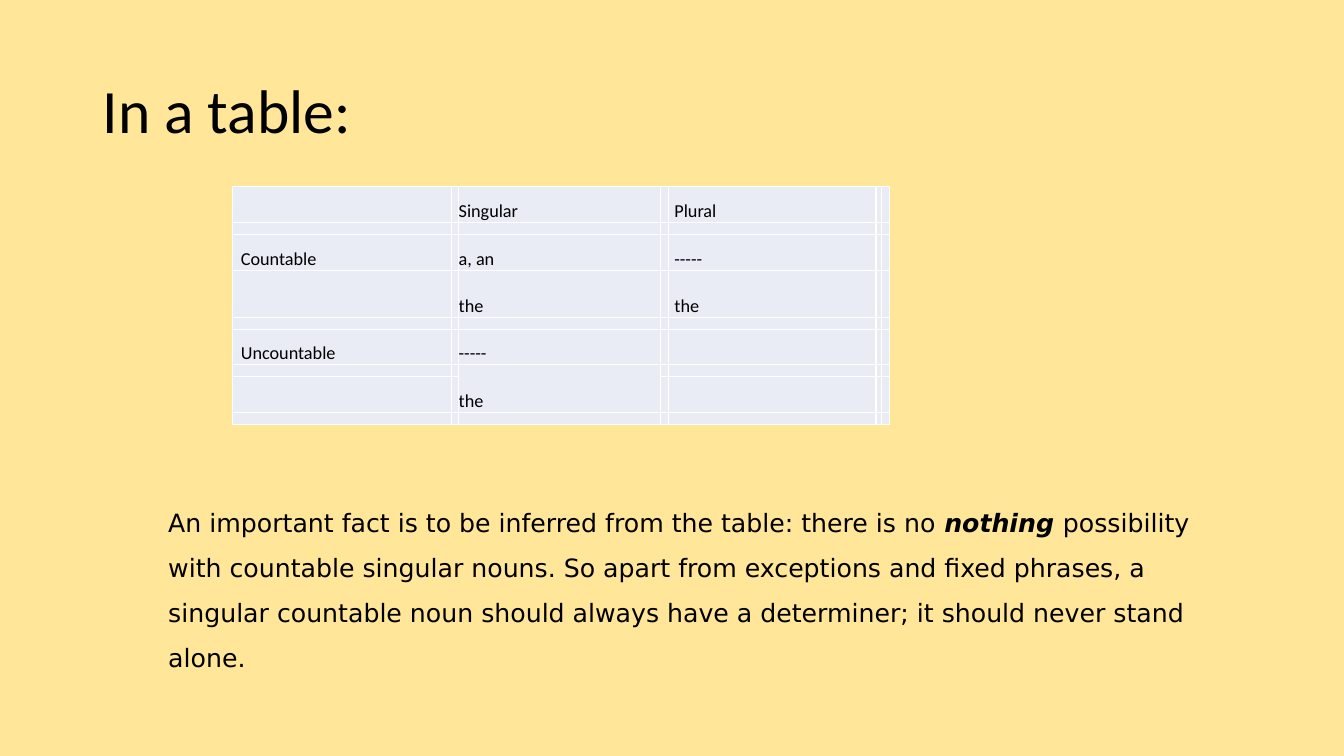
from dataclasses import dataclass

from lxml.etree import SubElement
from pptx import Presentation
from pptx.dml.color import RGBColor
from pptx.enum.text import MSO_ANCHOR, MSO_AUTO_SIZE
from pptx.oxml import parse_xml
from pptx.oxml.ns import nsdecls, qn
from pptx.util import Inches, Pt


@dataclass(frozen=True)
class Theme:
    background: str = "FFE699"
    ink: str = "000000"
    cell: str = "E9EBF5"
    border: str = "FFFFFF"
    title_font: str = "Calibri"
    body_font: str = "DejaVu Sans"
    title_size: int = 44
    table_size: int = 13
    body_size: int = 18
    empty_size: int = 2


theme = Theme()


def write(para, text, font=theme.title_font, size=theme.table_size,
          emphasis=False, indent=0, spacing=None):
    if indent:
        para._p.get_or_add_pPr().set("marL", str(Inches(indent)))
    if spacing:
        para.line_spacing = spacing
    span = para.add_run()
    span.text = text
    span.font.name = font
    span.font.size = Pt(size)
    span.font.bold = emphasis
    span.font.italic = emphasis
    span.font.color.rgb = RGBColor.from_string(theme.ink)


def add_borders(cell):
    properties = cell._tc.get_or_add_tcPr()
    for side in ("lnL", "lnR", "lnT", "lnB"):
        properties.append(parse_xml(
            f'<a:{side} {nsdecls("a")} w="{Pt(1)}"><a:solidFill>'
            f'<a:srgbClr val="{theme.border}"/></a:solidFill></a:{side}>'))


deck = Presentation()
deck.slide_width = Inches(13.33)
deck.slide_height = Inches(7.5)
page = deck.slides.add_slide(deck.slide_layouts[6])
page.background.fill.solid()
page.background.fill.fore_color.rgb = RGBColor.from_string(theme.background)

title_box = page.shapes.add_textbox(Inches(0.92), Inches(0.4), Inches(11.5), Inches(1.45))
title_box.text_frame.word_wrap = True
title_box.text_frame.vertical_anchor = MSO_ANCHOR.MIDDLE
write(title_box.text_frame.paragraphs[0], "In a table:", size=theme.title_size, spacing=0.9)

column_widths = [2.17, 0.07, 2, 0.08, 2.06, 0.05, 0.08]
row_heights = [0.36, 0.12, 0.35, 0.47, 0.12, 0.35, 0.12, 0.35, 0.12]
column_indents = {0: 0.08, 2: 0, 4: 0.06}
labels = {
    (0, 2): "Singular", (0, 4): "Plural",
    (2, 0): "Countable", (2, 2): "a, an", (2, 4): "-----",
    (3, 2): "the", (3, 4): "the",
    (5, 0): "Uncountable", (5, 2): "-----",
    (6, 2): "the",
}

table = page.shapes.add_table(
    len(row_heights), len(column_widths), Inches(2.31), Inches(1.85),
    Inches(sum(column_widths)), Inches(sum(row_heights))).table
table.first_row = False
table.horz_banding = False
for column, width in zip(table.columns, column_widths):
    column.width = Inches(width)
for row, height in zip(table.rows, row_heights):
    row.height = Inches(height)
table.cell(6, 2).merge(table.cell(7, 2))

for row_index in range(len(row_heights)):
    for column_index in range(len(column_widths)):
        cell = table.cell(row_index, column_index)
        cell.margin_left = cell.margin_right = cell.margin_top = cell.margin_bottom = 0
        cell.vertical_anchor = MSO_ANCHOR.BOTTOM
        add_borders(cell)
        cell.fill.solid()
        cell.fill.fore_color.rgb = RGBColor.from_string(theme.cell)
        para = cell.text_frame.paragraphs[0]
        label = labels.get((row_index, column_index))
        if label:
            write(para, label, indent=column_indents[column_index])
        else:
            SubElement(para._p, qn("a:endParaRPr")).set("sz", str(theme.empty_size * 100))

fact_box = page.shapes.add_textbox(Inches(1.49), Inches(4.84), Inches(10.61), Inches(1.91))
fact_box.text_frame.word_wrap = True
fact_box.text_frame.auto_size = MSO_AUTO_SIZE.SHAPE_TO_FIT_TEXT
fact_parts = [
    ("An important fact is to be inferred from the table: there is no ", False),
    ("nothing ", True),
    ("possibility with countable singular nouns. So apart from exceptions and fixed "
     "phrases, a singular countable noun should always have a determiner; it should "
     "never stand alone.", False),
]
for text, emphasis in fact_parts:
    write(fact_box.text_frame.paragraphs[0], text, font=theme.body_font,
          size=theme.body_size, emphasis=emphasis, indent=0.08, spacing=1.49)

deck.save("out.pptx")
